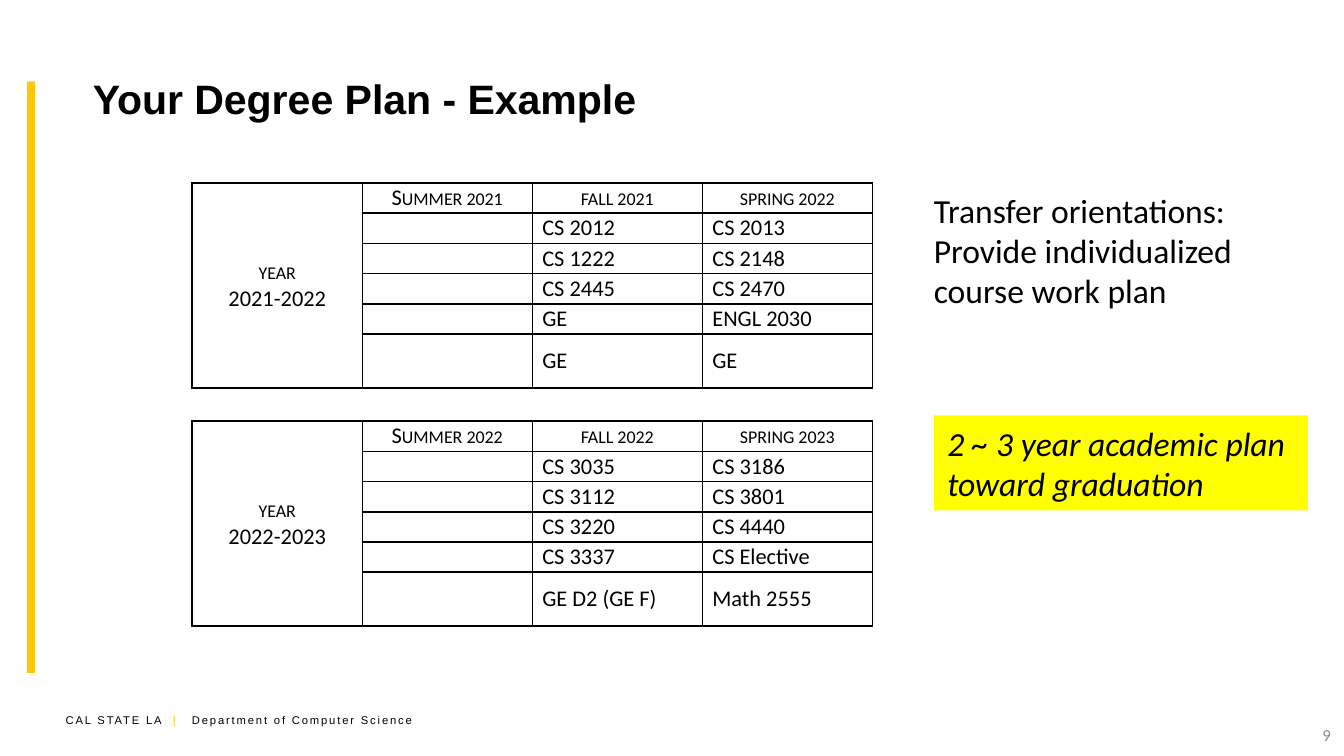
from lxml import etree
from pptx import Presentation
from pptx.dml.color import RGBColor
from pptx.enum import shapes, text
from pptx.oxml import ns
from pptx.util import Pt

BLACK, GOLD, YELLOW, GRAY = "000000", "FCC90A", "FFFF00", "8C8C8C"
COLUMN_WIDTH, ROW_HEIGHT = 91.1, 16.2
PLANS = [
    (98, "2021-2022", [
        ("Summer 2021", "fall 2021", "spring 2022"),
        ("", "CS 2012", "CS 2013"),
        ("", "CS 1222", "CS 2148"),
        ("", "CS 2445", "CS 2470"),
        ("", "GE", "ENGL 2030"),
        ("", "GE", "GE")]),
    (225.6, "2022-2023", [
        ("Summer 2022", "fall 2022", "spring 2023"),
        ("", "CS 3035", "CS 3186"),
        ("", "CS 3112", "CS 3801"),
        ("", "CS 3220", "CS 4440"),
        ("", "CS 3337", "CS Elective"),
        ("", "GE D2 (GE F)", "Math 2555")]),
]


def color(hex_value):
    return RGBColor.from_string(hex_value)


def add_element(parent, tag, **attributes):
    return etree.SubElement(parent, ns.qn(tag), attributes)


def style_run(run, size, hex_value=BLACK, font="Calibri", bold=False, italic=False):
    run.font.size, run.font.name = Pt(size), font
    run.font.bold, run.font.italic = bold, italic
    run.font.color.rgb = color(hex_value)


def fill_text(frame, content, size, align=text.PP_ALIGN.LEFT, **style):
    frame.word_wrap = True
    frame.text = content
    for paragraph in frame.paragraphs:
        paragraph.alignment = align
        for run in paragraph.runs:
            style_run(run, size, **style)


def add_text(slide, box, content, size, **style):
    frame = slide.shapes.add_textbox(*map(Pt, box)).text_frame
    fill_text(frame, content, size, **style)
    return frame


def add_block(slide, box, hex_value):
    block = slide.shapes.add_shape(shapes.MSO_SHAPE.RECTANGLE, *map(Pt, box))
    block.shadow.inherit = False
    block.fill.solid()
    block.fill.fore_color.rgb = color(hex_value)
    block.line.fill.background()
    return block


def add_footer(slide):
    frame = add_text(slide, (28.1, 378.7, 210, 14.4), "", 6)
    paragraph = frame.paragraphs[0]
    tabs = add_element(paragraph._p.get_or_add_pPr(), "a:tabLst")
    add_element(tabs, "a:tab", pos=str(Pt(67.7)), algn="l")
    for part, hex_value in (("CAL STATE LA ", BLACK), (" |\t", GOLD),
                            ("Department of Computer Science", BLACK)):
        run = paragraph.add_run()
        run.text = part
        style_run(run, 6, hex_value, "Arial")
        run.font._element.set("spc", "100")


def style_cell(cell):
    properties = cell._tc.get_or_add_tcPr()
    for side in "LRTB":
        border = add_element(properties, f"a:ln{side}", w=str(Pt(1)))
        fill = add_element(border, "a:solidFill")
        add_element(fill, "a:srgbClr", val=BLACK)
    cell.fill.background()
    cell.vertical_anchor = text.MSO_ANCHOR.MIDDLE


def fill_cell(cell, content, centered, small_caps_lines=0):
    cell.margin_left = cell.margin_right = Pt(5.4)
    cell.margin_top = cell.margin_bottom = 0
    align = text.PP_ALIGN.CENTER if centered else text.PP_ALIGN.LEFT
    fill_text(cell.text_frame, content, 12, align=align)
    for paragraph in cell.text_frame.paragraphs[:small_caps_lines]:
        for run in paragraph.runs:
            run.font._element.set("cap", "small")
    if not content:
        add_element(cell.text_frame.paragraphs[0]._p, "a:endParaRPr", sz="1200")


def add_plan(slide, top, year, terms):
    """Draw one academic year; the blank summer cell in the last row keeps its
    default text size and margins, which makes that row taller."""
    rows, columns = len(terms), len(terms[0]) + 1
    table = slide.shapes.add_table(
        rows, columns, Pt(103), Pt(top),
        Pt(columns * COLUMN_WIDTH), Pt(rows * ROW_HEIGHT)).table
    table.first_row = table.horz_banding = False
    for column in table.columns:
        column.width = Pt(COLUMN_WIDTH)
    for row in table.rows:
        row.height = Pt(ROW_HEIGHT)
    for r, courses in enumerate(terms):
        year_text = f"year\n{year}" if r == 0 else ""
        for c, content in enumerate((year_text, *courses)):
            cell = table.cell(r, c)
            style_cell(cell)
            if (r, c) != (rows - 1, 1):
                fill_cell(cell, content, r == 0, 1 if r == 0 else 0)
    table.cell(0, 0).merge(table.cell(rows - 1, 0))


def add_title(slide, content):
    title = slide.shapes.title
    title.left, title.top, title.width, title.height = map(Pt, (42.5, 18.7, 640.8, 67.7))
    fill_text(title.text_frame, content, 22, font="Arial", bold=True)
    title.text_frame.vertical_anchor = text.MSO_ANCHOR.MIDDLE


def main():
    deck = Presentation()
    deck.slide_width, deck.slide_height = Pt(720), Pt(405)
    slide = deck.slides.add_slide(deck.slide_layouts[5])
    add_footer(slide)
    add_block(slide, (14.4, 43.7, 4.3, 316.8), GOLD)
    add_title(slide, "Your Degree Plan - Example")
    for top, year, terms in PLANS:
        add_plan(slide, top, year, terms)
    page_number = add_text(slide, (552.2, 383, 167.8, 21.6), "9", 9,
                           align=text.PP_ALIGN.RIGHT, hex_value=GRAY)
    page_number.vertical_anchor = text.MSO_ANCHOR.MIDDLE
    add_text(slide, (493.2, 98, 201.6, 94.3),
             "Transfer orientations:\nProvide individualized course work plan", 18)
    callout = add_block(slide, (500.4, 222.5, 200.2, 51), YELLOW)
    fill_text(callout.text_frame, "2 ~ 3 year academic plan toward graduation",
              18, italic=True)
    deck.save("out.pptx")


if __name__ == "__main__":
    main()
